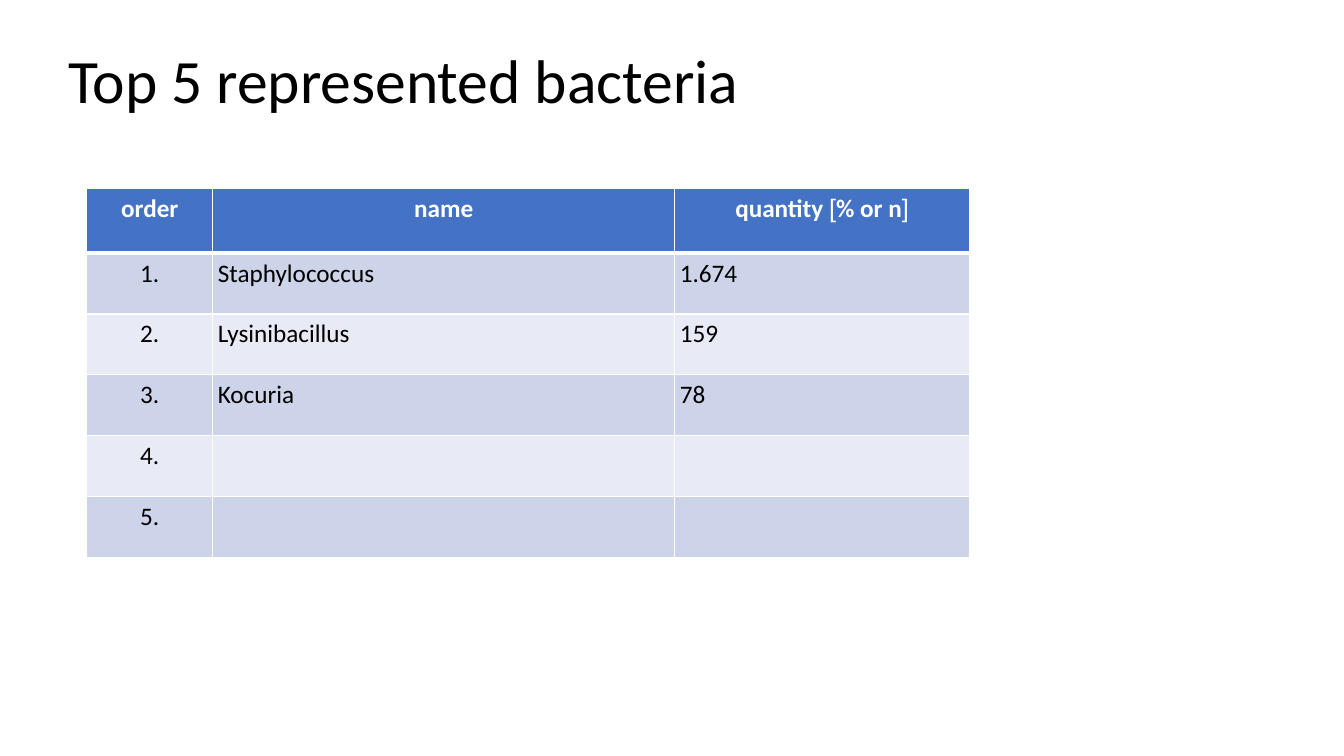
from dataclasses import dataclass

from lxml import etree
from pptx import Presentation
from pptx.dml.color import RGBColor
from pptx.enum import text as t
from pptx.oxml import ns
from pptx.util import Pt

WHITE = RGBColor(0xFF, 0xFF, 0xFF)
BLACK = RGBColor(0, 0, 0)
BLUE = RGBColor(0x44, 0x72, 0xC4)
BANDS = (RGBColor(0xCD, 0xD4, 0xEA), RGBColor(0xE8, 0xEB, 0xF5))
INSET = Pt(3.6)
THIN, THICK = 1, 3
HEAD_TALL, ROW_TALL = 46, 43.5


@dataclass
class Column:
    title: tuple[str, ...]  # every second part is set in plain Arial
    width: float
    align: t.PP_ALIGN


@dataclass
class Rank:
    order: str
    name: str = ""
    count: str = ""


COLUMNS = (
    Column(("order",), 90, t.PP_ALIGN.CENTER),
    Column(("name",), 330, t.PP_ALIGN.LEFT),
    Column(("quantity ", "[", "% or n", "]"), 210.5, t.PP_ALIGN.LEFT),
)
RANKS = (
    Rank("1.", "Staphylococcus", "1.674"),
    Rank("2.", "Lysinibacillus", "159"),
    Rank("3.", "Kocuria", "78"),
    Rank("4."),
    Rank("5."),
)


def set_font(font, size: float, color: RGBColor, bold: bool = False) -> None:
    font.name = "Calibri"
    font.size = Pt(size)
    font.color.rgb = color
    font.bold = bold


def set_inset(box) -> None:
    box.margin_left = box.margin_right = INSET
    box.margin_top = box.margin_bottom = INSET


def style_cell(cell, fill: RGBColor, top: float, bottom: float) -> None:
    set_inset(cell)
    props = cell._tc.get_or_add_tcPr()
    for side, width in zip("LRTB", (THIN, THIN, top, bottom)):
        line = etree.SubElement(props, ns.qn(f"a:ln{side}"), w=str(Pt(width)))
        solid = etree.SubElement(line, ns.qn("a:solidFill"))
        etree.SubElement(solid, ns.qn("a:srgbClr"), val=str(WHITE))
    cell.fill.solid()
    cell.fill.fore_color.rgb = fill


def add_title(slide, words: str) -> None:
    box = slide.shapes.add_textbox(Pt(45), Pt(7.2), Pt(936.7), Pt(104.4))
    frame = box.text_frame
    frame.word_wrap = True
    frame.vertical_anchor = t.MSO_ANCHOR.MIDDLE
    set_inset(frame)
    para = frame.paragraphs[0]
    para.text = words
    para.line_spacing = 0.9
    set_font(para.font, 44, BLACK)


def fill_head(cell, parts: tuple[str, ...]) -> None:
    style_cell(cell, BLUE, THIN, THICK)
    para = cell.text_frame.paragraphs[0]
    para.alignment = t.PP_ALIGN.CENTER
    for i, part in enumerate(parts):
        run = para.add_run()
        run.text = part
        set_font(run.font, 18, WHITE, bold=True)
        if i % 2:
            run.font.name = "Arial"
            run.font.bold = False


def add_ranks(slide) -> None:
    width = sum(col.width for col in COLUMNS)
    height = HEAD_TALL + ROW_TALL * len(RANKS)
    table = slide.shapes.add_table(
        len(RANKS) + 1, len(COLUMNS), Pt(62), Pt(134.8), Pt(width), Pt(height)
    ).table
    for row in table.rows:
        row.height = Pt(ROW_TALL)
    table.rows[0].height = Pt(HEAD_TALL)

    for c, col in enumerate(COLUMNS):
        table.columns[c].width = Pt(col.width)
        fill_head(table.cell(0, c), col.title)

    for r, rank in enumerate(RANKS):
        for c, words in enumerate((rank.order, rank.name, rank.count)):
            cell = table.cell(r + 1, c)
            style_cell(cell, BANDS[r % 2], THIN if r else THICK, THIN)
            para = cell.text_frame.paragraphs[0]
            para.text = words
            para.alignment = COLUMNS[c].align
            set_font(para.font, 18, BLACK)


def main() -> None:
    deck = Presentation()
    deck.slide_width, deck.slide_height = Pt(960), Pt(540)
    slide = deck.slides.add_slide(deck.slide_layouts[6])
    add_ranks(slide)
    add_title(slide, "Top 5 represented bacteria")
    deck.save("out.pptx")


if __name__ == "__main__":
    main()
